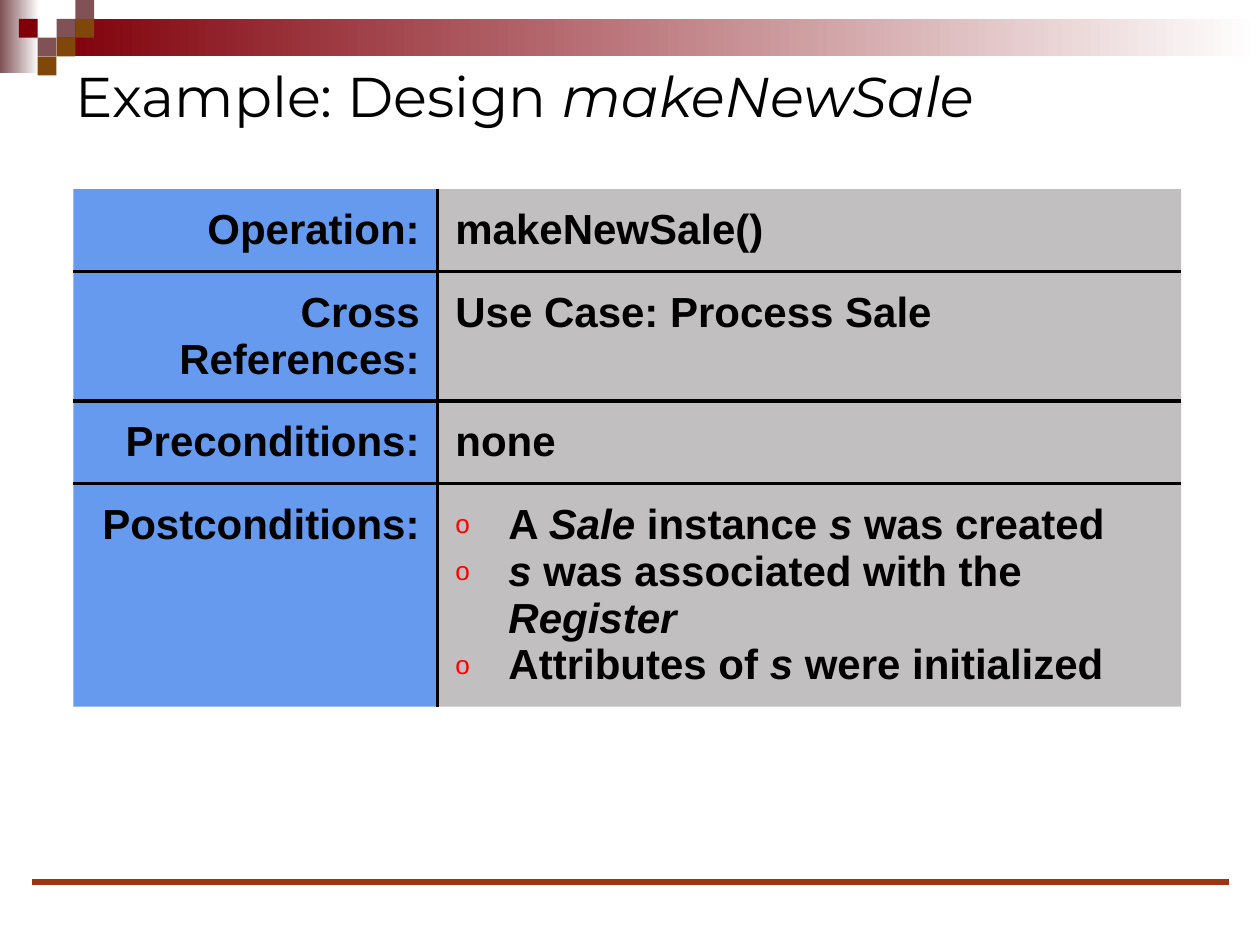
"""Build the slide with the operation contract for makeNewSale."""
from dataclasses import dataclass

from lxml import etree
from pptx import Presentation
from pptx.dml.color import RGBColor
from pptx.enum.dml import MSO_FILL
from pptx.enum.shapes import MSO_CONNECTOR, MSO_SHAPE
from pptx.enum.text import MSO_ANCHOR, MSO_AUTO_SIZE, PP_ALIGN
from pptx.oxml.ns import qn
from pptx.util import Cm, Pt

LEFT, RIGHT = PP_ALIGN.LEFT, PP_ALIGN.RIGHT
MIDDLE, NO_AUTOFIT = MSO_ANCHOR.MIDDLE, MSO_AUTO_SIZE.NONE
RECTANGLE, STRAIGHT = MSO_SHAPE.RECTANGLE, MSO_CONNECTOR.STRAIGHT
SOLID = MSO_FILL.SOLID


@dataclass(frozen=True)
class Theme:
    title_font: str = "Montserrat"
    body_font: str = "Arial"
    title_size: int = 32
    body_size: int = 24
    text: str = "000000"
    white: str = "FFFFFF"
    red: str = "80000A"
    mauve: str = "805255"
    brown: str = "81460A"
    footer: str = "A13214"
    label_fill: str = "0057E5"
    label_opacity: int = 60
    value_fill: str = "544E51"
    value_opacity: int = 36
    bullet: str = "FF0000"
    bullet_size: int = 62
    border_width: int = 2
    footer_width: int = 3


@dataclass(frozen=True)
class Tile:
    column: int
    row: int
    color: str


@dataclass(frozen=True)
class Phrase:
    text: str
    italic: bool = False


@dataclass(frozen=True)
class Entry:
    label: str
    lines: list[list[Phrase]]
    height: float
    bulleted: bool = False


THEME = Theme()
TILE_SIZE = 0.38
TILES = [
    Tile(3, 1, THEME.mauve), Tile(4, 0, THEME.mauve), Tile(4, 1, THEME.brown),
    Tile(2, 2, THEME.mauve), Tile(1, 1, THEME.red), Tile(3, 2, THEME.brown),
    Tile(2, 3, THEME.brown),
]
TITLE = [Phrase("Example: Design "), Phrase("makeNewSale", True)]
CONTRACT = [
    Entry("Operation:", [[Phrase("makeNewSale()")]], 1.57),
    Entry("Cross References:", [[Phrase("Use Case: Process Sale")]], 1.57),
    Entry("Preconditions:", [[Phrase("none")]], 1.57),
    Entry("Postconditions:", [
        [Phrase("A "), Phrase("Sale", True), Phrase(" instance "),
         Phrase("s", True), Phrase(" was created")],
        [Phrase("s", True), Phrase(" was associated with the "), Phrase("Register", True)],
        [Phrase("Attributes of "), Phrase("s", True), Phrase(" were initialized")],
    ], 3.71, bulleted=True),
]


def rgb(color: str) -> RGBColor:
    return RGBColor.from_string(color)


def add_block(slide, left: float, top: float, width: float, height: float,
              color: str, fade: bool = False) -> None:
    block = slide.shapes.add_shape(RECTANGLE, Cm(left), Cm(top), Cm(width), Cm(height))
    block.shadow.inherit = False
    block.line.fill.background()
    if fade:
        block.fill.gradient()
        block.fill.gradient_angle = 0
        for stop, shade in zip(block.fill.gradient_stops, (color, THEME.white)):
            stop.color.rgb = rgb(shade)
    else:
        block.fill.solid()
        block.fill.fore_color.rgb = rgb(color)


def add_footer_rule(slide) -> None:
    rule = slide.shapes.add_connector(STRAIGHT, Cm(0.64), Cm(17.78), Cm(24.77), Cm(17.78))
    rule.line.color.rgb = rgb(THEME.footer)
    rule.line.width = Pt(THEME.footer_width)
    etree.SubElement(rule.line._get_or_add_ln().getparent(), qn("a:effectLst"))


def write_phrases(paragraph, phrases: list[Phrase], font: str, size: int,
                  align: PP_ALIGN, bold: bool) -> None:
    paragraph.alignment = align
    paragraph.font.name = font
    paragraph.font.size = Pt(size)
    paragraph.font.bold = bold
    paragraph.font.color.rgb = rgb(THEME.text)
    for phrase in phrases:
        run = paragraph.add_run()
        run.text = phrase.text
        if phrase.italic:
            run.font.italic = True


def add_bullet(paragraph) -> None:
    properties = paragraph._p.get_or_add_pPr()
    properties.set("marL", str(Cm(1.07)))
    properties.set("indent", str(-Cm(1.07)))
    bullet_color = etree.SubElement(properties, qn("a:buClr"))
    etree.SubElement(bullet_color, qn("a:srgbClr"), val=THEME.bullet)
    etree.SubElement(properties, qn("a:buSzPct"), val=str(THEME.bullet_size * 1000))
    etree.SubElement(properties, qn("a:buFont"), typeface=THEME.body_font)
    etree.SubElement(properties, qn("a:buChar"), char="o")


def set_borders(cell, visible: dict[str, bool]) -> None:
    properties = cell._tc.get_or_add_tcPr()
    for position, (side, shown) in enumerate(visible.items()):
        width = Pt(THEME.border_width) if shown else 0
        border = etree.Element(qn(f"a:ln{side}"), w=str(width))
        if shown:
            paint = etree.SubElement(border, qn("a:solidFill"))
            etree.SubElement(paint, qn("a:srgbClr"), val=THEME.text)
        else:
            etree.SubElement(border, qn("a:noFill"))
        properties.insert(position, border)


def fill_cell(cell, lines: list[list[Phrase]], align: PP_ALIGN, color: str,
              opacity: int, bulleted: bool = False) -> None:
    cell.margin_left = cell.margin_right = cell.margin_top = cell.margin_bottom = Cm(0.36)
    cell.fill.solid()
    cell.fill.fore_color.rgb = rgb(color)
    if cell.fill.type == SOLID:
        tint = cell._tc.tcPr.find(f"{qn('a:solidFill')}/{qn('a:srgbClr')}")
        etree.SubElement(tint, qn("a:alpha"), val=str(opacity * 1000))
    frame = cell.text_frame
    for index, phrases in enumerate(lines):
        paragraph = frame.add_paragraph() if index else frame.paragraphs[0]
        if bulleted:
            add_bullet(paragraph)
        write_phrases(paragraph, phrases, THEME.body_font, THEME.body_size, align, True)


def add_contract(slide, entries: list[Entry]) -> None:
    height = sum(entry.height for entry in entries)
    table = slide.shapes.add_table(
        len(entries), 2, Cm(1.48), Cm(3.81), Cm(22.33), Cm(height)).table
    table.first_row = table.horz_banding = False
    table.columns[0].width, table.columns[1].width = Cm(7.34), Cm(14.99)
    for index, entry in enumerate(entries):
        table.rows[index].height = Cm(entry.height)
        label, value = table.cell(index, 0), table.cell(index, 1)
        fill_cell(label, [[Phrase(entry.label)]], RIGHT,
                  THEME.label_fill, THEME.label_opacity)
        fill_cell(value, entry.lines, LEFT,
                  THEME.value_fill, THEME.value_opacity, entry.bulleted)
        above, below = index > 0, index < len(entries) - 1
        set_borders(label, {"L": False, "R": True, "T": above, "B": below})
        set_borders(value, {"L": True, "R": False, "T": above, "B": below})


def set_title(slide, phrases: list[Phrase]) -> None:
    title = slide.shapes.title
    title.left, title.top, title.width, title.height = Cm(1.27), Cm(1.07), Cm(22.86), Cm(1.7)
    title.text_frame.auto_size = NO_AUTOFIT
    title.text_frame.vertical_anchor = MIDDLE
    write_phrases(title.text_frame.paragraphs[0], phrases,
                  THEME.title_font, THEME.title_size, LEFT, False)


def main() -> None:
    deck = Presentation()
    deck.slide_width, deck.slide_height = Cm(25.4), Cm(19.05)
    slide = deck.slides.add_slide(deck.slide_layouts[5])
    add_block(slide, 0, 0, 0.79, 1.47, THEME.mauve, fade=True)
    add_block(slide, 1.14, 0.38, 24.26, 0.76, THEME.red, fade=True)
    for tile in TILES:
        add_block(slide, tile.column * TILE_SIZE, tile.row * TILE_SIZE,
                  TILE_SIZE, TILE_SIZE, tile.color)
    add_footer_rule(slide)
    set_title(slide, TITLE)
    add_contract(slide, CONTRACT)
    deck.save("out.pptx")


if __name__ == "__main__":
    main()
